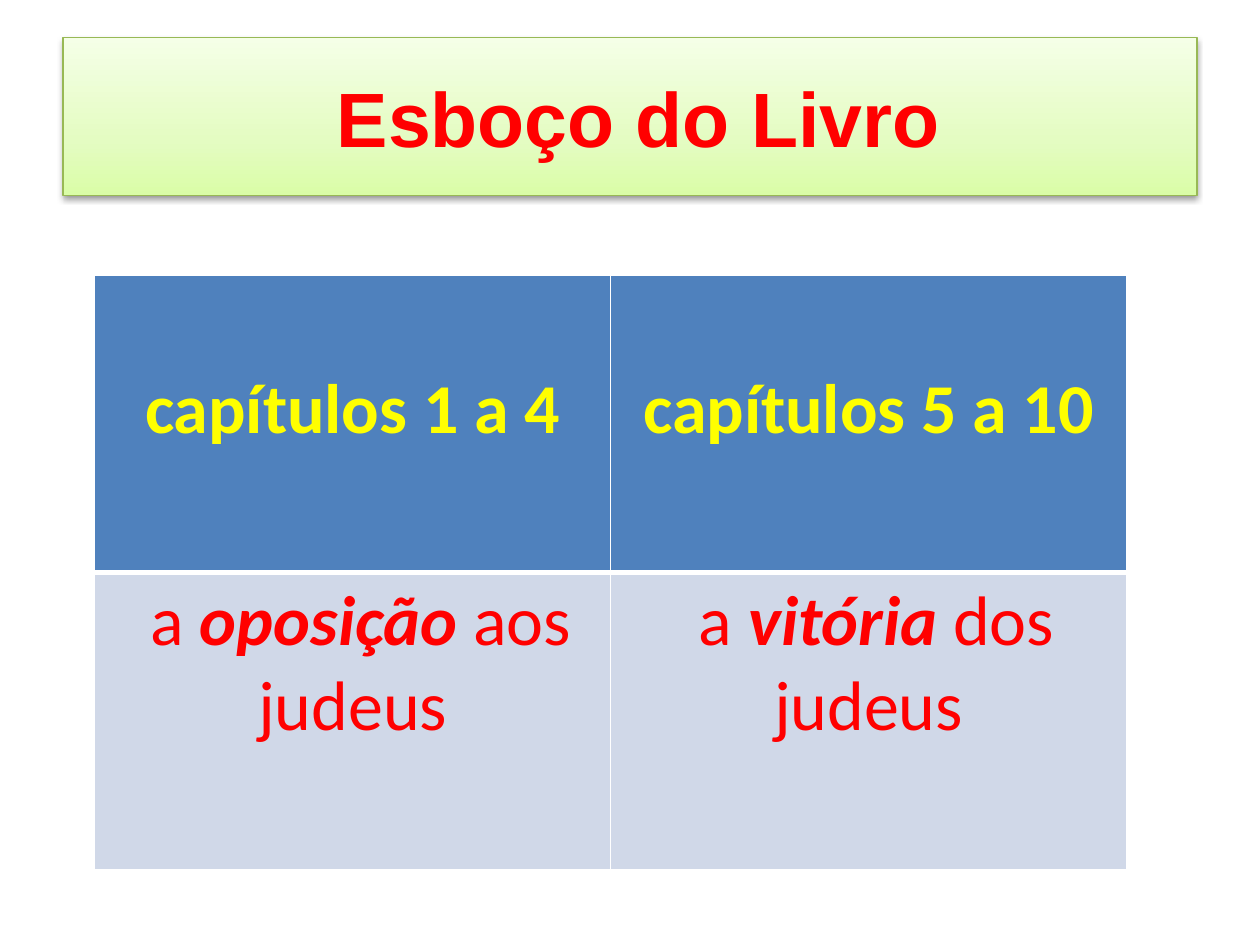
from dataclasses import dataclass

from lxml.etree import SubElement
from pptx import Presentation
from pptx.dml.color import RGBColor
from pptx.enum.shapes import MSO_SHAPE
from pptx.enum.text import MSO_ANCHOR, PP_ALIGN
from pptx.oxml import parse_xml
from pptx.oxml.ns import nsdecls, qn
from pptx.util import Cm, Pt


@dataclass(frozen=True)
class Theme:
    red: str = "FF0000"
    yellow: str = "FFFF00"
    header: str = "4F81BD"
    body: str = "D0D8E8"
    rule: str = "FFFFFF"
    title_line: str = "98B955"
    gradient: tuple = ((0, "DAFDA7"), (35, "E4FCC2"), (100, "F5FFE7"))
    title_font: str = "Arial"
    table_font: str = "Calibri"
    title_size: int = 44
    title_indent_size: int = 36
    table_size: int = 40


@dataclass(frozen=True)
class Section:
    chapters: str
    lead: str
    keyword: str
    rest: str


T = Theme()
SECTIONS = (
    Section("capítulos 1 a 4", " a ", "oposição ", "aos judeus"),
    Section("capítulos 5 a 10", " a ", "vitória ", "dos judeus"),
)


def add_run(p, text: str, color: str, **fmt) -> None:
    r = p.add_run()
    r.text = text
    for name, value in fmt.items():
        setattr(r.font, name, value)
    r.font.color.rgb = RGBColor.from_string(color)


def set_borders(cell, widths: dict[str, float]) -> None:
    """Put border lines, in points, ahead of the cell's fill."""
    tcPr = cell._tc.get_or_add_tcPr()
    for i, (side, width) in enumerate(widths.items()):
        ln = parse_xml(f'<a:ln{side} {nsdecls("a")} w="{Pt(width)}"/>')
        fill = SubElement(ln, qn("a:solidFill"))
        SubElement(fill, qn("a:srgbClr"), val=T.rule)
        tcPr.insert(i, ln)


def style_cell(cell, fill: str, borders: dict[str, float]):
    """Fill and frame the cell; return its centred paragraph."""
    cell.fill.solid()
    cell.fill.fore_color.rgb = RGBColor.from_string(fill)
    set_borders(cell, borders)
    p = cell.text_frame.paragraphs[0]
    p.alignment = PP_ALIGN.CENTER
    return p


def add_title(s, text: str) -> None:
    sp = s.shapes.add_shape(MSO_SHAPE.RECTANGLE, Cm(1.27), Cm(0.76), Cm(22.86), Cm(3.18))
    sp.line.color.rgb = RGBColor.from_string(T.title_line)
    sp.line.width = Pt(0.75)
    stops = "".join(
        f'<a:gs pos="{pos * 1000}"><a:srgbClr val="{color}"/></a:gs>'
        for pos, color in T.gradient
    )
    spPr = sp._element.spPr
    spPr.find(qn("a:ln")).addprevious(parse_xml(
        f'<a:gradFill {nsdecls("a")} rotWithShape="1"><a:gsLst>{stops}</a:gsLst>'
        '<a:lin ang="16200000" scaled="0"/></a:gradFill>'))
    spPr.append(parse_xml(
        f'<a:effectLst {nsdecls("a")}><a:outerShdw blurRad="{Pt(3.1)}" dist="{Pt(1.6)}" '
        'dir="5400000" rotWithShape="0"><a:srgbClr val="000000">'
        '<a:alpha val="38000"/></a:srgbClr></a:outerShdw></a:effectLst>'))
    tf = sp.text_frame
    tf.word_wrap = True
    tf.vertical_anchor = MSO_ANCHOR.MIDDLE
    p = tf.paragraphs[0]
    p.alignment = PP_ALIGN.CENTER
    for part, size in ((" ", T.title_indent_size), (text, T.title_size)):
        add_run(p, part, T.red, name=T.title_font, size=Pt(size), bold=True)


def add_outline(s, sections: tuple[Section, ...]) -> None:
    table = s.shapes.add_table(
        2, len(sections), Cm(1.91), Cm(5.54), Cm(20.8), Cm(12)).table
    for row in table.rows:
        row.height = Cm(6)
    font = {"name": T.table_font, "size": Pt(T.table_size)}
    for col, section in enumerate(sections):
        head, body = table.cell(0, col), table.cell(1, col)
        p = style_cell(head, T.header, {"L": 1, "R": 1, "T": 1, "B": 3})
        head.margin_top = Cm(1.85)
        add_run(p, section.chapters, T.yellow, bold=True, **font)
        p = style_cell(body, T.body, {"L": 1, "R": 1, "T": 3, "B": 1})
        for text, strong in ((section.lead, False), (section.keyword, True),
                             (section.rest, False)):
            add_run(p, text, T.red, bold=strong, italic=strong, **font)


def main() -> None:
    prs = Presentation()
    prs.slide_width, prs.slide_height = Cm(25.4), Cm(19.05)
    s = prs.slides.add_slide(prs.slide_layouts[6])
    add_title(s, "Esboço do Livro")
    add_outline(s, SECTIONS)
    prs.save("out.pptx")


if __name__ == "__main__":
    main()
